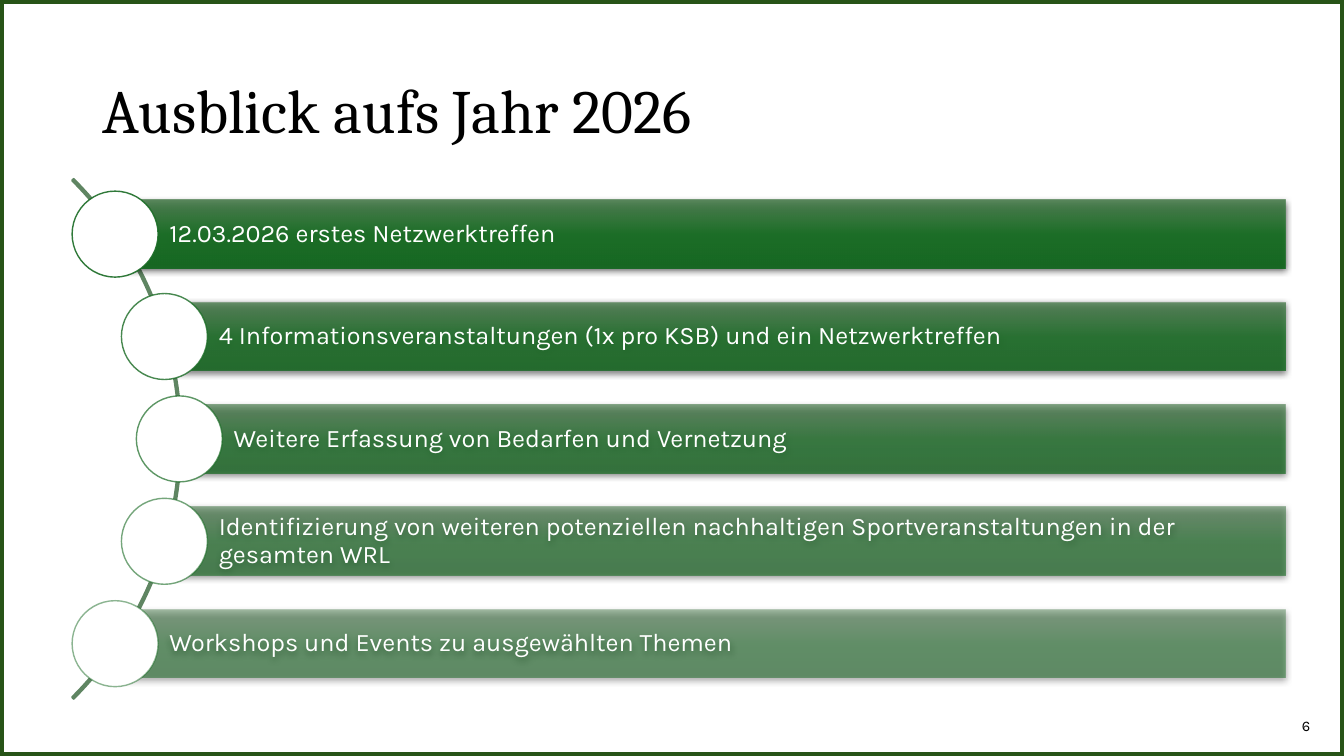
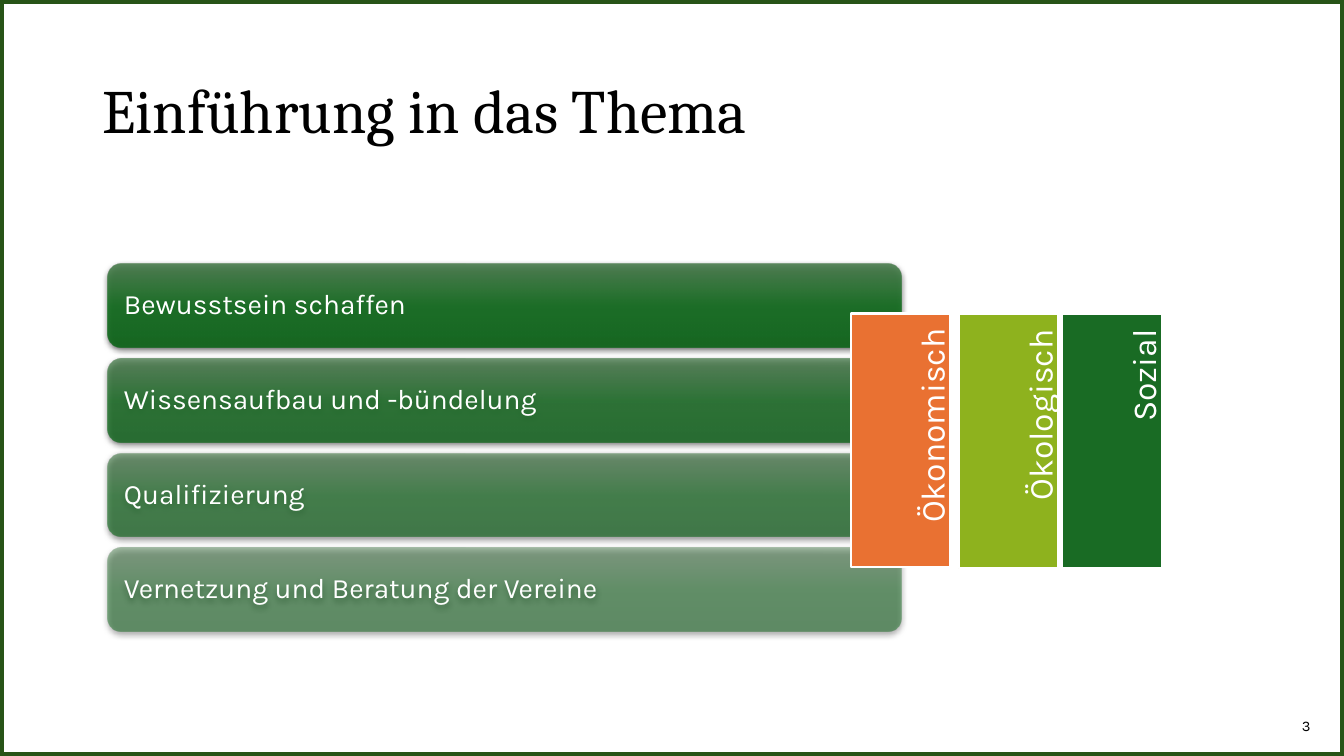
from collections import namedtuple
from math import sqrt

from pptx import Presentation
from pptx.dml.color import RGBColor
from pptx.enum.shapes import MSO_SHAPE
from pptx.enum.text import MSO_ANCHOR, MSO_AUTO_SIZE, PP_ALIGN
from pptx.oxml import parse_xml
from pptx.oxml.ns import nsdecls, qn
from pptx.util import Cm, Pt

Box = namedtuple("Box", "left top width height")

SLIDE_BOX = Box(0, 0, 33.87, 19.05)
TITLE_BOX = Box(2.33, 1.02, 29.21, 3.68)
NUMBER_BOX = Box(32.56, 17.93, 1.09, 0.71)

TITLE_FONT = "Cambria"
BODY_FONT = "Karla"
BLACK = "000000"
WHITE = "FFFFFF"
FRAME_GREEN = "275417"
ARC_GREEN = "5F8562"
GREEN = "196B24"
LIME = "8EB21E"
ORANGE = "E97132"
GRADIENT_STOPS = ((0, "4D7E50"), (50, "156F21"), (100, "0F661B"))

OUTLOOK = (
    "12.03.2026 erstes Netzwerktreffen",
    "4 Informationsveranstaltungen (1x pro KSB) und ein Netzwerktreffen",
    "Weitere Erfassung von Bedarfen und Vernetzung",
    "Identifizierung von weiteren potenziellen nachhaltigen "
    "Sportveranstaltungen in der gesamten WRL",
    "Workshops und Events zu ausgewählten Themen",
)
GOALS = (
    "Bewusstsein schaffen",
    "Wissensaufbau und -bündelung",
    "Qualifizierung",
    "Vernetzung und Beratung der Vereine",
)
DIMENSIONS = (
    ("Ökonomisch", ORANGE, Box(21.44, 7.9, 2.51, 6.38)),
    ("Ökologisch", LIME, Box(24.16, 7.92, 2.51, 6.4)),
    ("Sozial", GREEN, Box(26.77, 7.92, 2.51, 6.4)),
)


def color(hex_string):
    return RGBColor.from_string(hex_string)


def lengths(box):
    return [Cm(value) for value in box]


def row_opacity(index, count):
    return round(90 - 40 * index / (count - 1))


def add_preset(slide, preset, box, fill=None, line=None, line_width=1):
    shape = slide.shapes.add_shape(preset, *lengths(box))
    shape.shadow.inherit = False
    if fill:
        shape.fill.solid()
        shape.fill.fore_color.rgb = color(fill)
    else:
        shape.fill.background()
    if line:
        shape.line.color.rgb = color(line)
        shape.line.width = Pt(line_width)
    else:
        shape.line.fill.background()
    return shape


def write_text(shape, text, size, font=BODY_FONT, text_color=WHITE,
               alignment=PP_ALIGN.LEFT, margins=(0.25, 0.13, 0.25, 0.13),
               anchor=MSO_ANCHOR.MIDDLE, line_spacing=0.9):
    frame = shape.text_frame
    frame.word_wrap = True
    frame.auto_size = MSO_AUTO_SIZE.NONE
    frame.vertical_anchor = anchor
    (frame.margin_left, frame.margin_top,
     frame.margin_right, frame.margin_bottom) = lengths(margins)
    paragraph = frame.paragraphs[0]
    paragraph.text = text
    paragraph.alignment = alignment
    paragraph.line_spacing = line_spacing
    paragraph.font.name = font
    paragraph.font.size = Pt(size)
    paragraph.font.color.rgb = color(text_color)


def add_gradient_bar(slide, preset, box, opacity):
    shape = add_preset(slide, preset, box)
    properties = shape.element.spPr
    stops = "".join(
        f'<a:gs pos="{position * 1000}"><a:srgbClr val="{stop_color}">'
        f'<a:alpha val="{opacity * 1000}"/></a:srgbClr></a:gs>'
        for position, stop_color in GRADIENT_STOPS
    )
    gradient = parse_xml(
        f'<a:gradFill {nsdecls("a")} rotWithShape="1"><a:gsLst>{stops}</a:gsLst>'
        '<a:lin ang="5400000" scaled="0"/></a:gradFill>'
    )
    properties.replace(properties.find(qn("a:noFill")), gradient)
    properties.find(qn("a:effectLst")).append(parse_xml(
        f'<a:outerShdw {nsdecls("a")} blurRad="{Pt(4.5)}" dist="{Pt(1.5)}" '
        f'dir="5400000" algn="ctr" rotWithShape="0"><a:srgbClr val="{BLACK}">'
        '<a:alpha val="63000"/></a:srgbClr></a:outerShdw>'
    ))
    return shape


def add_row_circle(slide, box, opacity):
    circle = add_preset(slide, MSO_SHAPE.OVAL, box, WHITE, GREEN)
    line_color = circle.element.spPr.find(qn("a:ln")).find(
        f'{qn("a:solidFill")}/{qn("a:srgbClr")}')
    line_color.append(parse_xml(f'<a:alpha {nsdecls("a")} val="{opacity * 1000}"/>'))


def add_base_slide(presentation, title, number):
    slide = presentation.slides.add_slide(presentation.slide_layouts[5])
    placeholder = slide.shapes.title
    (placeholder.left, placeholder.top,
     placeholder.width, placeholder.height) = lengths(TITLE_BOX)
    write_text(placeholder, title, 44, TITLE_FONT, BLACK)
    add_preset(slide, MSO_SHAPE.RECTANGLE, SLIDE_BOX, line=FRAME_GREEN, line_width=6)
    number_box = slide.shapes.add_textbox(*lengths(NUMBER_BOX))
    write_text(number_box, number, 10.5, text_color=BLACK,
               anchor=MSO_ANCHOR.TOP, line_spacing=1)
    return slide


def add_arc_list(slide, box, items):
    pitch = box.height / len(items)
    bar_height = 0.67 * pitch
    diameter = 0.84 * pitch
    middle = box.top + box.height / 2
    arc_size = 18.52
    arc = add_preset(
        slide, MSO_SHAPE.BLOCK_ARC,
        Box(box.left + 2.75 - arc_size, middle - arc_size / 2, arc_size, arc_size),
        line=ARC_GREEN, line_width=1.5)
    for index, value in enumerate((189, 27, 0.003)):
        arc.adjustments[index] = value

    radius = 9.03
    for index, item in enumerate(items):
        center_y = box.top + (index + 0.5) * pitch
        bar_left = box.left + 2.7 - radius + sqrt(radius ** 2 - (center_y - middle) ** 2)
        opacity = row_opacity(index, len(items))
        bar = add_gradient_bar(
            slide, MSO_SHAPE.RECTANGLE,
            Box(bar_left, center_y - bar_height / 2,
                box.left + box.width - bar_left, bar_height), opacity)
        write_text(bar, item, 18, margins=(1.37, 0.13, 0.13, 0.13))
        add_row_circle(
            slide, Box(bar_left - diameter / 2, center_y - diameter / 2,
                       diameter, diameter), opacity)


def add_goal_list(slide, box, items):
    gap = 0.28
    bar_height = (box.height - gap * (len(items) - 1)) / len(items)
    for index, item in enumerate(items):
        bar = add_gradient_bar(
            slide, MSO_SHAPE.ROUNDED_RECTANGLE,
            Box(box.left, box.top + index * (bar_height + gap), box.width, bar_height),
            row_opacity(index, len(items)))
        write_text(bar, item, 20, margins=(0.3, 0.2, 0.3, 0.2))


def add_dimension_column(slide, box, label, fill):
    add_preset(slide, MSO_SHAPE.RECTANGLE, box, fill, WHITE, 1.5)
    length = 0.9 * box.height
    thickness = 0.66
    label_box = slide.shapes.add_textbox(*lengths(Box(
        box.left + 2.13 - length / 2, box.top + (length - thickness) / 2,
        length, thickness)))
    label_box.rotation = 270
    write_text(label_box, label, 24, alignment=PP_ALIGN.RIGHT,
               margins=(0.25, 0, 0.38, 0.08))


def build_outlook_slide(presentation):
    slide = add_base_slide(presentation, "Ausblick aufs Jahr 2026", "6")
    add_arc_list(slide, Box(1.82, 4.61, 30.57, 12.9), OUTLOOK)


def build_introduction_slide(presentation):
    slide = add_base_slide(presentation, "Einführung in das Thema", "3")
    add_goal_list(slide, Box(2.72, 6.64, 20, 9.28), GOALS)
    for label, fill, box in DIMENSIONS:
        add_dimension_column(slide, box, label, fill)


def main():
    presentation = Presentation()
    presentation.slide_width = Cm(SLIDE_BOX.width)
    presentation.slide_height = Cm(SLIDE_BOX.height)
    build_outlook_slide(presentation)
    build_introduction_slide(presentation)
    presentation.save("out.pptx")


if __name__ == "__main__":
    main()
